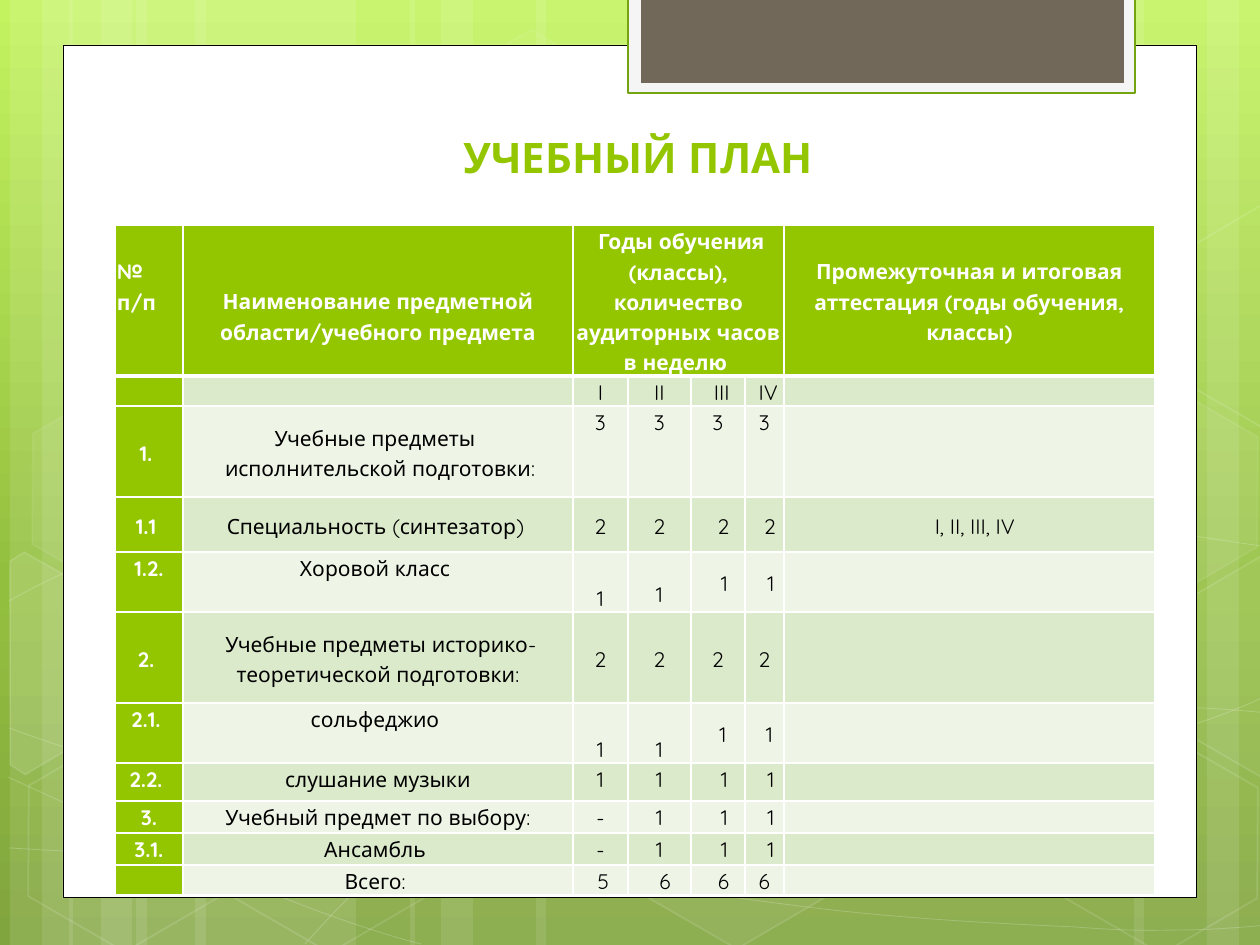
from math import cos, radians, sin
from typing import NamedTuple, Optional

from pptx import Presentation
from pptx import util as u
from pptx.dml.color import RGBColor
from pptx.enum import shapes, text
from pptx.oxml import parse_xml
from pptx.oxml.ns import nsdecls, qn

EMU_PER_PX = 914400 / 126
FONT = "Quicksand"
GREEN, WHITE, BLACK = "94C600", "FFFFFF", "000000"
BANDS = ("DCEACC", "EEF5E7")
LINE = 30  # height of one line of table text
TILT = 30  # degrees, of every hexagon


class Stroke(NamedTuple):
    color: str
    points: float
    alpha: int = 100


class Hexagon(NamedTuple):
    left: int
    top: int
    fill_alpha: int
    line_alpha: int


class Cell(NamedTuple):
    text: str = ""
    indent: int = 0  # of the last paragraph
    drop: int = 0  # gap above the text
    middle: bool = False


# Background: (left, width) of the bands, Bezier controls of the curves, hexagons
STRIPES = [(136, 220), (10, 63), (42, 105), (195, 220), (69, 63), (101, 105),
           (924, 220), (1207, 63), (1134, 105), (536, 388), (410, 63), (441, 105)]
CURVES = [
    [(9, 848), (77, 852), (145, 856), (239, 854), (334, 853), (451, 851), (577, 838),
     (703, 825), (882, 801), (998, 777), (1113, 753), (1231, 716), (1269, 694)],
    [(9, 601), (45, 581), (82, 562), (152, 543), (224, 524), (326, 496), (437, 488),
     (549, 479), (685, 478), (824, 488), (963, 498), (1193, 537), (1269, 547)],
    [(8, 777), (160, 847), (311, 916), (421, 944)],
    [(9, 728), (48, 742), (88, 756), (161, 776), (234, 795), (344, 827), (450, 848),
     (554, 869), (687, 892), (791, 905), (896, 919), (1008, 924), (1075, 927),
     (1140, 932), (1158, 930), (1191, 930), (1223, 929), (1246, 927), (1269, 925)],
    [(305, 944), (328, 919), (350, 893), (381, 871), (411, 848), (454, 823), (489, 805),
     (524, 788), (546, 780), (592, 767), (638, 755), (722, 737), (766, 728),
     (811, 719), (818, 719), (857, 717), (896, 713), (958, 709), (1000, 708),
     (1045, 707), (1116, 708), (1116, 708), (1144, 708), (1173, 708), (1201, 708),
     (1223, 709), (1245, 711), (1256, 712), (1268, 713), (1264, 712), (1268, 713)],
]
HEXAGONS = [Hexagon(421, 45, 4, 8), Hexagon(626, 742, 6, 12), Hexagon(14, 745, 0, 12),
            Hexagon(18, 393, 7, 8), Hexagon(219, 746, 0, 12), Hexagon(949, 571, 10, 12),
            Hexagon(1051, 747, 0, 12), Hexagon(1051, 396, 7, 8)]
CUT_HEXAGONS = [  # fill alpha, centre of turning, corners after turning
    (10, (45, 674), [(10, 561), (24, 552), (121, 607), (120, 718), (25, 774), (10, 765)]),
    (4, (1241, 655), [(1167, 611), (1261, 556), (1271, 562), (1271, 772), (1263, 777), (1167, 722)]),
    (0, (1241, 304), [(1167, 261), (1261, 205), (1272, 212), (1271, 422), (1263, 427), (1167, 372)]),
]


def mid(label: str, indent: int = 0) -> Cell:
    return Cell(label, indent, middle=True)


# Curriculum: number, subject, hours in years I to IV, assessment
COLUMNS = [68, 390, 55, 63, 54, 39, 371]
HEIGHTS = [151, 30, 91, 55, 60, 91, 60, 38, 32, 32, 30]
ROWS = [
    [Cell("№ п/п", drop=LINE),
     Cell("Наименование предметной\nобласти/учебного предмета", drop=2 * LINE),
     Cell(" Годы обучения (классы), количество аудиторных часов в неделю "), Cell(), Cell(), Cell(),
     Cell("Промежуточная и итоговая аттестация (годы обучения, классы)", drop=LINE)],
    [Cell(), Cell(), mid("I"), mid("II"), Cell("III", 8), Cell("IV", 8), Cell()],
    [mid("1. "), mid("Учебные предметы \nисполнительской подготовки: ", 10), *[Cell("3")] * 4, Cell()],
    [mid("1.1 "), mid("Специальность (синтезатор) ", 1), mid("2"), mid("2"),
     mid("2", 11), mid("2", 11), mid("I, II, III, IV", 11)],
    [Cell("1.2."), Cell("Хоровой класс "), Cell("1", drop=LINE), Cell("1", drop=26),
     mid("1", 13), mid("1", 13), Cell()],
    [mid("2. "), mid("Учебные предметы историко-теоретической подготовки: ", 6), *[mid("2")] * 4, Cell()],
    [Cell("2.1. "), Cell("сольфеджио "), *[Cell("1", drop=LINE)] * 2, *[mid("1", 10)] * 2, Cell()],
    [Cell("2.2. "), Cell("слушание музыки"), *[Cell("1")] * 2, *[Cell("1", 13)] * 2, Cell()],
    [Cell("3."), Cell("Учебный предмет по выбору:"), Cell("-"), Cell("1"), *[Cell("1", 13)] * 2, Cell()],
    [Cell("3.1."), Cell("Ансамбль "), Cell("-"), Cell("1"), *[Cell("1", 13)] * 2, Cell()],
    [Cell(), Cell("Всего: "), Cell("5", 6), Cell("6", 11), Cell("6", 11), Cell("6"), Cell()],
]


def px(length: int) -> u.Emu:
    return u.Emu(round(length * EMU_PER_PX))


def rgb(color: str) -> RGBColor:
    return RGBColor.from_string(color)


def set_alpha(fill_parent, alpha: int) -> None:
    if alpha < 100:
        fill_parent.find(qn("a:solidFill"))[0].append(
            parse_xml(f'<a:alpha {nsdecls("a")} val="{alpha * 1000}"/>'))


def paint(shape, fill: Optional[str], alpha: int = 100, stroke: Optional[Stroke] = None) -> None:
    shape.shadow.inherit = False
    if fill and alpha:
        shape.fill.solid()
        shape.fill.fore_color.rgb = rgb(fill)
        set_alpha(shape.element.spPr, alpha)
    else:
        shape.fill.background()
    if stroke:
        shape.line.color.rgb = rgb(stroke.color)
        shape.line.width = u.Pt(stroke.points)
        set_alpha(shape.element.spPr.find(qn("a:ln")), stroke.alpha)
    else:
        shape.line.fill.background()


def add_rectangle(slide, left: int, top: int, width: int, height: int):
    return slide.shapes.add_shape(shapes.MSO_SHAPE.RECTANGLE, px(left), px(top), px(width), px(height))


def add_outline(slide, points: list, close: bool):
    builder = slide.shapes.build_freeform(*points[0], scale=EMU_PER_PX)
    builder.add_line_segments(points[1:], close=close)
    return builder.convert_to_shape()


def add_curve(slide, controls: list):
    """Turn each three straight segments of an outline into one cubic curve."""
    curve = add_outline(slide, controls, False)
    route = next(curve.element.iter(qn("a:path")))
    segments = route.findall(qn("a:lnTo"))
    for first, *others in zip(segments[::3], segments[1::3], segments[2::3]):
        first.tag = qn("a:cubicBezTo")
        for other in others:
            first.append(other[0])
            route.remove(other)
    return curve


def turn_back(corners: list, centre: tuple) -> list:
    c, s = cos(radians(TILT)), sin(radians(TILT))
    offsets = [(x - centre[0], y - centre[1]) for x, y in corners]
    return [(centre[0] + x * c + y * s, centre[1] - x * s + y * c) for x, y in offsets]


def set_borders(cell, bottom: int) -> None:
    props = cell._tc.get_or_add_tcPr()
    for i, (side, points) in enumerate((("L", 1), ("R", 1), ("T", 1), ("B", bottom))):
        props.insert(i, parse_xml(f'<a:ln{side} {nsdecls("a")} w="{u.Pt(points)}"><a:solidFill>'
                                  f'<a:srgbClr val="{WHITE}"/></a:solidFill></a:ln{side}>'))


def style(paragraph, size: int, color: str, bold: bool) -> None:
    paragraph.alignment = text.PP_ALIGN.CENTER
    font = paragraph.font
    font.name, font.size, font.bold, font.color.rgb = FONT, u.Pt(size), bold, rgb(color)


def fill_cell(cell, content: Cell, fill: str, color: str, bold: bool) -> None:
    cell.fill.solid()
    cell.fill.fore_color.rgb = rgb(fill)
    cell.margin_left = cell.margin_right = px(2)
    cell.margin_top, cell.margin_bottom = px(content.drop), 0
    cell.vertical_anchor = text.MSO_ANCHOR.MIDDLE if content.middle else text.MSO_ANCHOR.TOP
    cell.text = content.text
    for paragraph in cell.text_frame.paragraphs:
        style(paragraph, 12, color, bold)
        paragraph.line_spacing = 1.15
    if content.indent:
        paragraph._p.get_or_add_pPr().set("marL", str(px(content.indent)))


def draw_background(slide) -> None:
    stops = "".join(f'<a:gs pos="{pos * 1000}"><a:srgbClr val="{color}"/></a:gs>'
                    for pos, color in ((0, "C3F35F"), (62, "93BF3F"), (100, "81A53E")))
    slide.element.cSld.insert(0, parse_xml(
        f'<p:bg {nsdecls("p", "a")}><p:bgPr><a:gradFill rotWithShape="1"><a:gsLst>{stops}'
        '</a:gsLst><a:lin ang="5400000" scaled="0"/></a:gradFill><a:effectLst/></p:bgPr></p:bg>'))
    for left, width in STRIPES:
        paint(add_rectangle(slide, left, 0, width, 945), WHITE, 10)
    for controls in CURVES:
        paint(add_curve(slide, controls), None, stroke=Stroke(WHITE, 0.5, 20))
    for left, top, fill_alpha, line_alpha in HEXAGONS:
        hexagon = slide.shapes.add_shape(shapes.MSO_SHAPE.HEXAGON, px(left), px(top), px(221), px(192))
        hexagon.adjustments[0], hexagon.rotation = 0.285, TILT
        paint(hexagon, WHITE, fill_alpha, Stroke(WHITE, 1, line_alpha))
    for alpha, centre, corners in CUT_HEXAGONS:
        hexagon = add_outline(slide, turn_back(corners, centre), True)
        hexagon.rotation = TILT
        paint(hexagon, WHITE, alpha, Stroke(WHITE, 1, 12))
    # White sheet and the tab at its top
    paint(add_rectangle(slide, 63, 45, 1134, 853), WHITE, stroke=Stroke(BLACK, 0.5))
    paint(add_rectangle(slide, 628, -3, 507, 96), "F5F5F5", stroke=Stroke("74A510", 1.25))
    paint(add_rectangle(slide, 641, -3, 483, 86), "71685A")


def draw_title(slide) -> None:
    frame = slide.shapes.add_textbox(px(154), px(115), px(968), px(73)).text_frame
    frame.word_wrap, frame.vertical_anchor = True, text.MSO_ANCHOR.BOTTOM
    frame.text = "УЧЕБНЫЙ ПЛАН"
    style(frame.paragraphs[0], 24, GREEN, True)


def draw_curriculum(slide) -> None:
    table = slide.shapes.add_table(len(ROWS), len(COLUMNS), px(115), px(225),
                                   px(sum(COLUMNS)), px(sum(HEIGHTS))).table
    table.horz_banding = False
    for column, width in zip(table.columns, COLUMNS):
        column.width = px(width)
    for r, (height, row) in enumerate(zip(HEIGHTS, ROWS)):
        table.rows[r].height = px(height)
        for c, content in enumerate(row):
            strong = r == 0 or c == 0
            fill_cell(table.cell(r, c), content, GREEN if strong else BANDS[(r - 1) % 2],
                      WHITE if strong else BLACK, strong)
            set_borders(table.cell(r, c), 3 if r == 0 else 1)
    table.cell(0, 0).text_frame.paragraphs[0].alignment = text.PP_ALIGN.LEFT
    table.cell(0, 2).merge(table.cell(0, 5))


deck = Presentation()
deck.slide_width, deck.slide_height = px(1260), px(945)
plan = deck.slides.add_slide(deck.slide_layouts[6])
draw_background(plan)
draw_title(plan)
draw_curriculum(plan)
deck.save("out.pptx")
